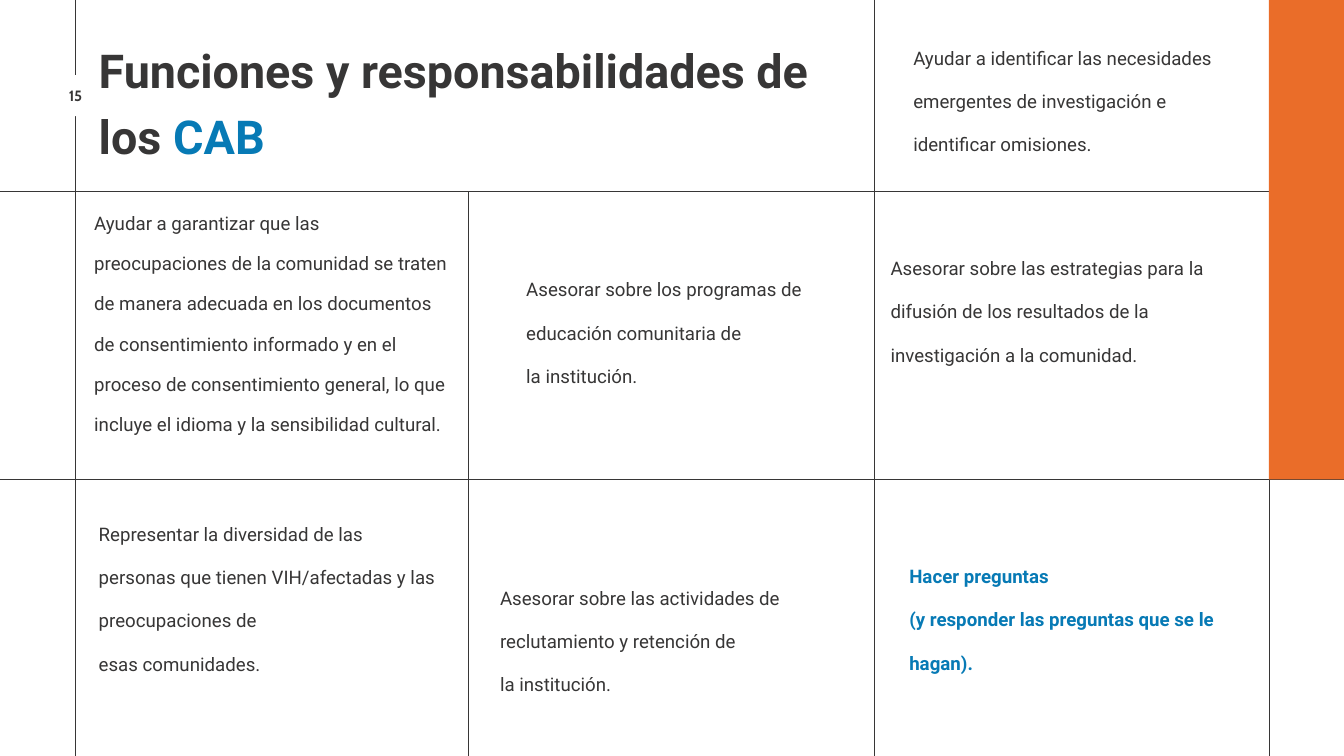
from lxml import etree
from pptx import Presentation
from pptx.dml.color import RGBColor
from pptx.enum.shapes import MSO_CONNECTOR, MSO_SHAPE
from pptx.enum.text import MSO_ANCHOR, PP_ALIGN
from pptx.oxml.ns import qn
from pptx.util import Cm, Pt

STRAIGHT = MSO_CONNECTOR.STRAIGHT
RECTANGLE = MSO_SHAPE.RECTANGLE
TOP = MSO_ANCHOR.TOP
LEFT, CENTER = PP_ALIGN.LEFT, PP_ALIGN.CENTER

INK, BLUE, ORANGE, WHITE = "373636", "077AB5", "EA6D29", "FFFFFF"
SLIDE_W, SLIDE_H = 50.8, 28.58

# Grid lines, in cm
MARGIN_X, SECOND_X, THIRD_X, BAND_X = 2.83, 17.69, 33.03, 47.96
HEADER_Y, MIDDLE_Y = 7.25, 18.12

# Each duty of the CAB: box in cm, text, and format where it differs
DUTIES = [
    ((34.52, 0.97, 12.83, 4.78),
     "Ayudar a identificar las necesidades emergentes de investigación "
     "e identificar omisiones.", {}),
    ((3.56, 7.32, 13.46, 10.46),
     "Ayudar a garantizar que las preocupaciones de la comunidad se traten "
     "de manera adecuada en los documentos de consentimiento informado y en "
     "el proceso de consentimiento general, lo que incluye el idioma y la "
     "sensibilidad cultural.", {"spacing": 43.2}),
    ((19.89, 9.73, 10.97, 4.78),
     "Asesorar sobre los programas de educación comunitaria de\n"
     "la institución.", {}),
    ((33.66, 8.92, 13.69, 6.4),
     "Asesorar sobre las estrategias para la difusión de los resultados "
     "de la investigación a la comunidad.", {}),
    ((3.73, 18.97, 13.06, 6.3),
     "Representar la diversidad de las personas que tienen VIH/afectadas "
     "y las preocupaciones de\nesas comunidades.", {}),
    ((18.9, 21.39, 13, 4.67),
     "Asesorar sobre las actividades de reclutamiento y retención de\n"
     "la institución.", {}),
    ((34.37, 20.57, 12.27, 4.78),
     ["Hacer preguntas", "(y responder las preguntas que se le hagan)."],
     {"color": BLUE, "bold": True}),
]


def rgb(color):
    return RGBColor.from_string(color)


def add_block(slide, box, color):
    block = slide.shapes.add_shape(RECTANGLE, *map(Cm, box))
    block.shadow.inherit = False
    block.fill.solid()
    block.fill.fore_color.rgb = rgb(color)
    block.line.fill.background()


def add_rule(slide, x1, y1, x2, y2):
    rule = slide.shapes.add_connector(STRAIGHT, Cm(x1), Cm(y1), Cm(x2), Cm(y2))
    rule.line.color.rgb = rgb(INK)
    rule.line.width = Pt(0.75)
    etree.SubElement(rule._element.spPr, qn("a:effectLst"))


def add_run(paragraph, text, size, color, bold, font):
    run = paragraph.add_run()
    run.text = text
    run.font.name = font
    run.font.size = Pt(size)
    run.font.bold = bold
    run.font.color.rgb = rgb(color)


def add_text(slide, box, text, size=20, color=INK, bold=False, font="Roboto",
             spacing=46.4, align=LEFT, accent=""):
    """Text is one paragraph or a list of them; accent ends the last in blue."""
    frame = slide.shapes.add_textbox(*map(Cm, box)).text_frame
    frame.word_wrap = True
    frame.vertical_anchor = TOP
    frame.margin_left = frame.margin_right = 0
    frame.margin_top = frame.margin_bottom = 0
    paragraphs = [text] if isinstance(text, str) else text
    for i, content in enumerate(paragraphs):
        paragraph = frame.add_paragraph() if i else frame.paragraphs[0]
        paragraph.alignment = align
        paragraph.line_spacing = Pt(spacing)
        for j, line in enumerate(content.split("\n")):
            if j:
                paragraph.add_line_break()
            add_run(paragraph, line, size, color, bold, font)
    if accent:
        add_run(paragraph, accent, size, BLUE, bold, font)


def main():
    prs = Presentation()
    prs.slide_width, prs.slide_height = Cm(SLIDE_W), Cm(SLIDE_H)
    slide = prs.slides.add_slide(prs.slide_layouts[6])

    # Left margin line, interrupted by the page number
    add_rule(slide, MARGIN_X, 0, MARGIN_X, SLIDE_H)
    add_block(slide, (1.75, 2.84, 2.18, 1.55), WHITE)
    add_text(slide, (1.93, 3.33, 1.85, 0.64), "15", size=16, bold=True,
             font="Cabin", spacing=17.6, align=CENTER)

    # Grid
    for y in (HEADER_Y, MIDDLE_Y):
        add_rule(slide, 0, y, SLIDE_W, y)
    for x, top in ((BAND_X, 0), (SECOND_X, HEADER_Y), (THIRD_X, 0)):
        add_rule(slide, x, top, x, SLIDE_H)

    # Orange band on the right
    add_block(slide, (BAND_X, 0, SLIDE_W - BAND_X, MIDDLE_Y), ORANGE)

    # Title
    add_text(slide, (3.73, 1.22, 28.98, 4.75),
             "Funciones y responsabilidades de los", size=50, bold=True,
             spacing=70.4, accent=" CAB")

    # Duties
    for box, text, style in DUTIES:
        add_text(slide, box, text, **style)

    prs.save("out.pptx")


if __name__ == "__main__":
    main()
